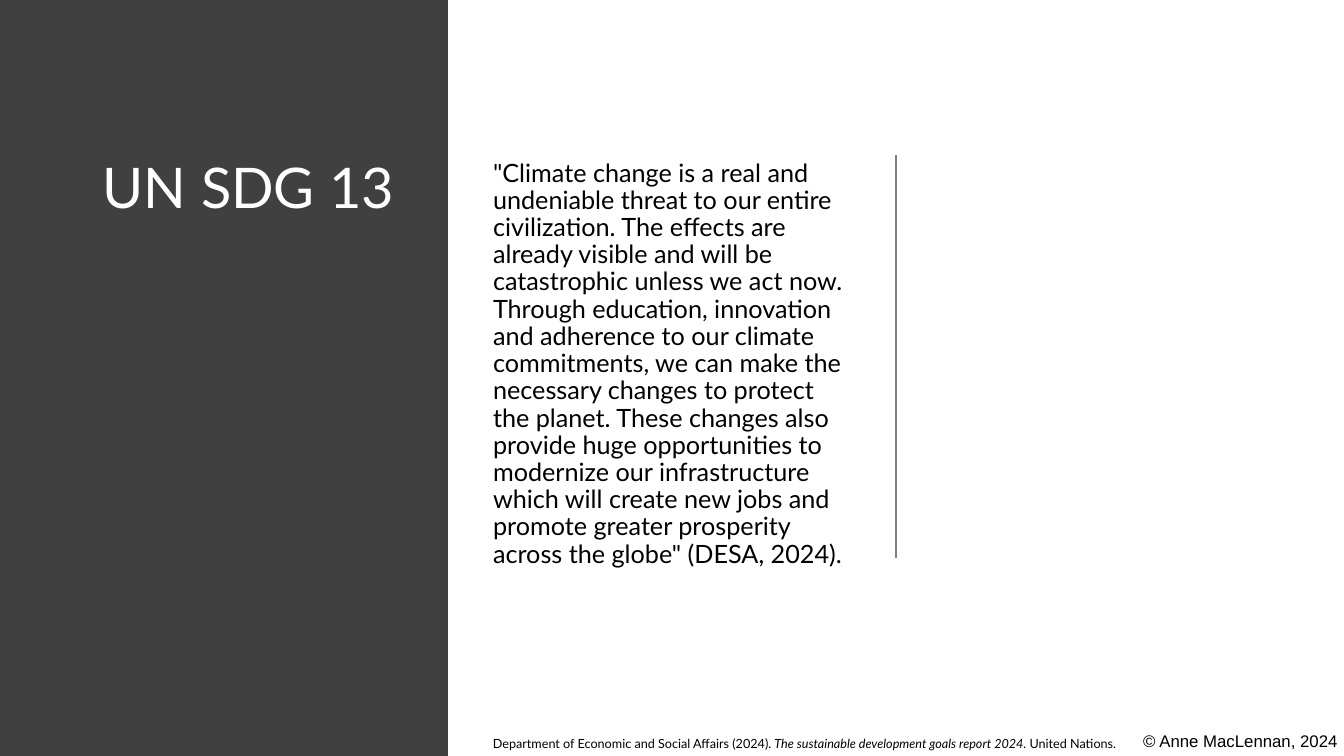
"""Build the UN SDG 13 slide with a dark title panel and a quotation."""
from pptx import Presentation
from pptx.dml.color import RGBColor
from pptx.enum.shapes import MSO_CONNECTOR as Connector, MSO_SHAPE as Shape
from pptx.enum.text import MSO_ANCHOR as Anchor, MSO_AUTO_SIZE as AutoSize, PP_ALIGN as Align
from pptx.oxml.ns import qn
from pptx.util import Inches, Pt
from lxml.etree import SubElement

TITLE = "UN SDG 13"
QUOTE = (
    '"Climate change is a real and undeniable threat to our entire civilization. '
    "The effects are already visible and will be catastrophic unless we act now. "
    "Through education, innovation and adherence to our climate commitments, "
    "we can make the necessary changes to protect the planet. "
    "These changes also provide huge opportunities to modernize our infrastructure "
    'which will create new jobs and promote greater prosperity across the globe" (DESA, 2024).'
)
SOURCE = [
    ("Department of Economic and Social Affairs (2024). ", False),
    ("The sustainable development goals report 2024.", True),
    (" United Nations.", False),
]
CREDIT = [("© Anne MacLennan, 2024", False)]

WIDTH, HEIGHT = 13.33, 7.5
COLUMN = WIDTH / 3
TOP, TEXT_HEIGHT, RULE_HEIGHT = 1.54, 4.77, 4
QUOTE_LEFT = 4.79
CREDIT_LEFT = 11.24


def color(value):
    return RGBColor.from_string(value)


def place(shape, left, top, width, height):
    shape.left, shape.top = Inches(left), Inches(top)
    shape.width, shape.height = Inches(width), Inches(height)


def style(span, size, font, value):
    span.font.size, span.font.name = Pt(size), font
    span.font.color.rgb = color(value)


def fill_placeholder(shape, text, size, value, left, width):
    place(shape, left, TOP, width, TEXT_HEIGHT)
    frame = shape.text_frame
    frame.text = text
    frame.word_wrap, frame.auto_size = True, AutoSize.NONE
    frame.vertical_anchor = Anchor.TOP
    para = frame.paragraphs[0]
    para.alignment, para.line_spacing = Align.LEFT, 0.9
    style(para.runs[0], size, "Lato", value)
    return para


def add_note(page, spans, size, font, left, top, width):
    box = page.shapes.add_textbox(Inches(left), Inches(top), Inches(width), Inches(HEIGHT - top))
    frame = box.text_frame
    frame.word_wrap, frame.margin_right = True, 0
    for text, italic in spans:
        span = frame.paragraphs[0].add_run()
        span.text = text
        span.font.italic = italic
        style(span, size, font, "000000")


def main():
    deck = Presentation()
    deck.slide_width, deck.slide_height = Inches(WIDTH), Inches(HEIGHT)
    page = deck.slides.add_slide(deck.slide_layouts[1])
    title, body = page.shapes.title, page.placeholders[1]

    panel = page.shapes.add_shape(Shape.RECTANGLE, 0, 0, Inches(COLUMN), Inches(HEIGHT))
    panel.shadow.inherit = False
    panel.fill.solid()
    panel.fill.fore_color.rgb = color("404040")
    panel.line.fill.background()
    title.element.addprevious(panel.element)

    fill_placeholder(title, TITLE, 40, "FFFFFF", 0.92, 3.17)
    quote = fill_placeholder(body, QUOTE, 18, "000000", QUOTE_LEFT, 3.75)
    quote.space_before = Pt(10)
    properties = quote.runs[0].font and quote.alignment is not None and quote._p.get_or_add_pPr()
    properties.set("marL", "0")
    properties.set("indent", "0")
    SubElement(properties, qn("a:buNone"))

    rule_left = Inches(2 * COLUMN)
    rule = page.shapes.add_connector(
        Connector.STRAIGHT, rule_left, Inches(TOP), rule_left, Inches(TOP + RULE_HEIGHT))
    rule.line.color.rgb = color("808080")
    rule.line.width = Pt(1)
    SubElement(rule.element.spPr, qn("a:effectLst"))

    add_note(page, CREDIT, 12, "Arial", CREDIT_LEFT, 7.2, WIDTH - CREDIT_LEFT)
    add_note(page, SOURCE, 9, "Lato", QUOTE_LEFT, 7.25, CREDIT_LEFT - QUOTE_LEFT)
    deck.save("out.pptx")


if __name__ == "__main__":
    main()
